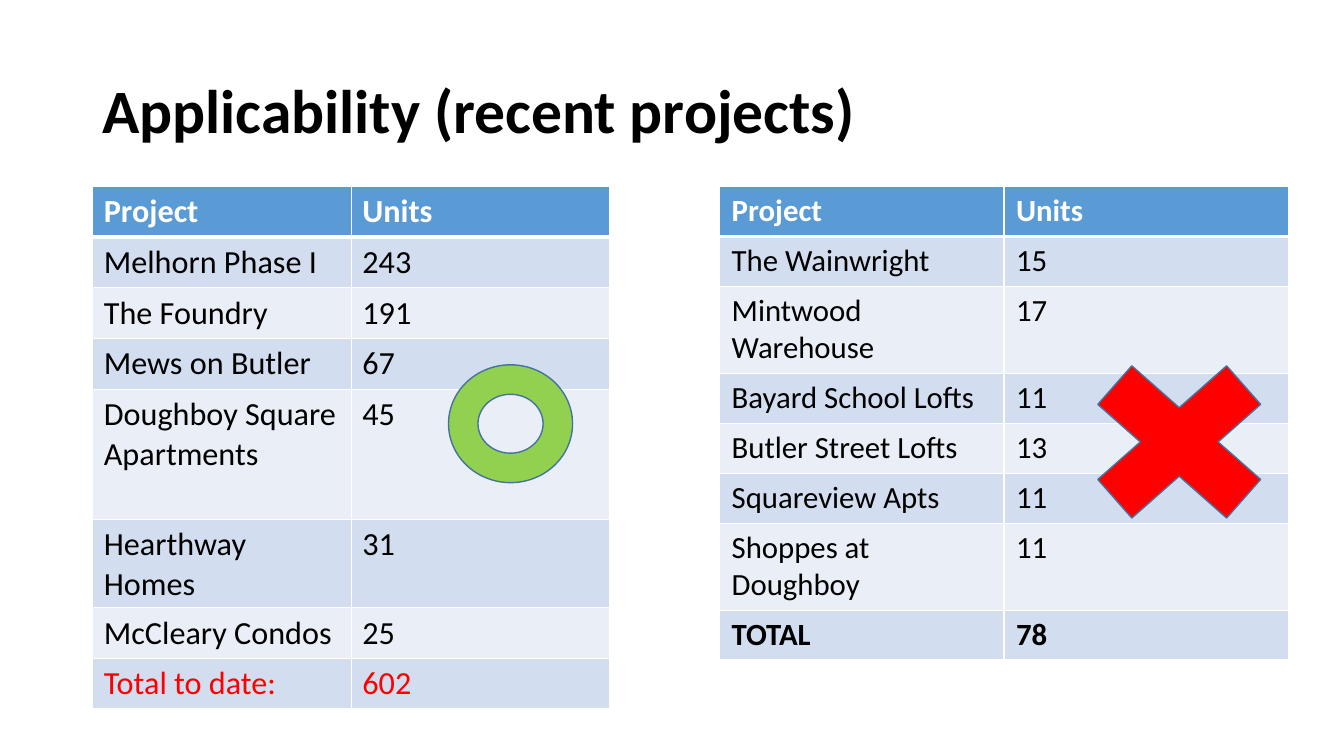
from lxml.etree import SubElement
from pptx import Presentation
from pptx.dml.color import RGBColor
from pptx.enum.shapes import MSO_SHAPE
from pptx.enum.text import MSO_ANCHOR
from pptx.oxml.ns import qn
from pptx.util import Pt

COLORS = {
    "text": "000000",
    "white": "FFFFFF",
    "header": "5B9BD5",
    "odd": "D2DEEF",
    "even": "EAEFF7",
    "red": "FF0000",
    "green": "92D050",
    "outline": "43739E",
}
FONT = "Calibri"

APPLICABLE = [
    ("Project", "Units"),
    ("Melhorn Phase I", "243"),
    ("The Foundry", "191"),
    ("Mews on Butler", "67"),
    ("Doughboy Square Apartments", "45"),
    ("Hearthway Homes", "31"),
    ("McCleary Condos", "25"),
    ("Total to date:", "602"),
]
EXEMPT = [
    ("Project", "Units"),
    ("The Wainwright", "15"),
    ("Mintwood Warehouse", "17"),
    ("Bayard School Lofts", "11"),
    ("Butler Street Lofts", "13"),
    ("Squareview Apts", "11"),
    ("Shoppes at Doughboy", "11"),
    ("TOTAL", "78"),
]


def rgb(name):
    return RGBColor.from_string(COLORS[name])


def add_run(paragraph, text, size, color, bold):
    run = paragraph.add_run()
    run.text = text
    run.font.name = FONT
    run.font.size = Pt(size)
    run.font.bold = bold
    run.font.color.rgb = rgb(color)


def set_borders(cell, bottom_width):
    properties = cell._tc.get_or_add_tcPr()
    widths = {"a:lnL": 1, "a:lnR": 1, "a:lnT": 1, "a:lnB": bottom_width}
    for position, (tag, width) in enumerate(widths.items()):
        border = SubElement(properties, qn(tag), w=str(Pt(width)))
        fill = SubElement(border, qn("a:solidFill"))
        SubElement(fill, qn("a:srgbClr"), val=COLORS["white"])
        properties.insert(position, border)


def add_title(slide, left, top, width, height):
    frame = slide.shapes.add_textbox(Pt(left), Pt(top), Pt(width), Pt(height)).text_frame
    frame.word_wrap = True
    frame.vertical_anchor = MSO_ANCHOR.MIDDLE
    heading = frame.paragraphs[0]
    heading.line_spacing = 0.9
    add_run(heading, "Applicability (recent projects)", 44, "text", True)


def add_projects(slide, box, projects, row_height, tall_rows, size, insets, total_style):
    left, top, width, height = box
    side, edge = insets
    table = slide.shapes.add_table(
        len(projects), 2, Pt(left), Pt(top), Pt(width), Pt(height)
    ).table
    for column in table.columns:
        column.width = Pt(width / 2)
    for index, project in enumerate(projects):
        table.rows[index].height = Pt(tall_rows.get(index, row_height))
        if index == 0:
            fill, color, bold = "header", "white", True
        else:
            fill, color, bold = ("odd" if index % 2 else "even"), "text", False
        if index == len(projects) - 1:
            color, bold = total_style
        for cell, text in zip(table.rows[index].cells, project):
            cell.margin_left = cell.margin_right = Pt(side)
            cell.margin_top = cell.margin_bottom = Pt(edge)
            cell.fill.solid()
            cell.fill.fore_color.rgb = rgb(fill)
            set_borders(cell, 1 if index else 3)
            add_run(cell.text_frame.paragraphs[0], text, size, color, bold)


def add_mark(slide, kind, color, left, top, width, height):
    mark = slide.shapes.add_shape(kind, Pt(left), Pt(top), Pt(width), Pt(height))
    mark.shadow.inherit = False
    mark.fill.solid()
    mark.fill.fore_color.rgb = rgb(color)
    mark.line.color.rgb = rgb("outline")
    mark.line.width = Pt(1)


def add_applicable(slide, left, top, width, height):
    add_projects(slide, (left, top, width, height), APPLICABLE, 36.2, {4: 92.9},
                 23, (8, 4), ("red", False))


def add_exempt(slide, left, top, width, height):
    add_projects(slide, (left, top, width, height), EXEMPT, 35.7, {2: 62.1, 6: 62.1},
                 22, (8.6, 4.2), ("text", True))


def add_marks(slide, left, top):
    add_mark(slide, MSO_SHAPE.DONUT, "green", left, top + 23, 88.6, 84.2)
    add_mark(slide, MSO_SHAPE.MATH_MULTIPLY, "red", left + 433.4, top, 177.1, 156.2)


def main():
    presentation = Presentation()
    presentation.slide_width = Pt(960)
    presentation.slide_height = Pt(540)
    slide = presentation.slides.add_slide(presentation.slide_layouts[6])
    add_title(slide, 66, 28.8, 828, 104.4)
    add_applicable(slide, 66.2, 133.2, 369.4, 346.3)
    add_exempt(slide, 514.1, 133.2, 406.1, 338.4)
    add_marks(slide, 320.4, 237.6)
    presentation.save("out.pptx")


if __name__ == "__main__":
    main()
